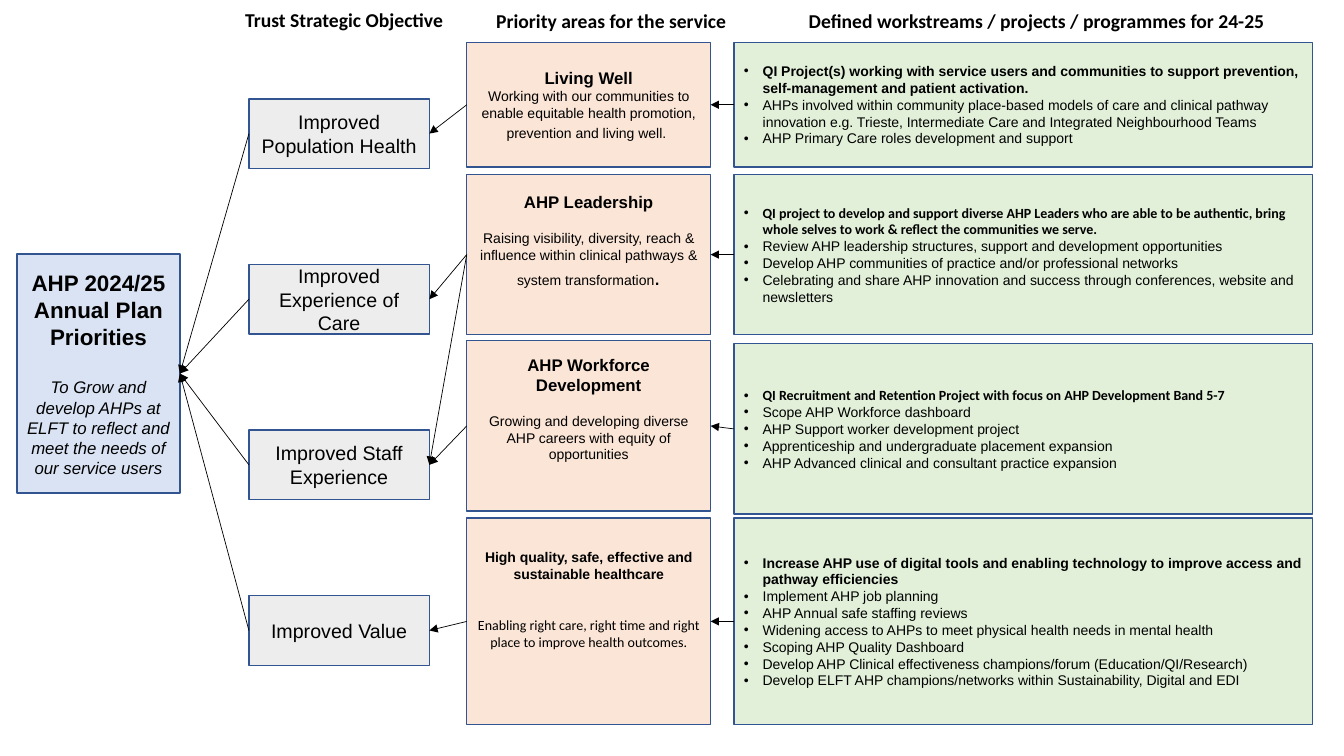
from lxml.etree import SubElement
from pptx import Presentation
from pptx.dml.color import RGBColor
from pptx.enum.shapes import MSO_CONNECTOR, MSO_SHAPE
from pptx.enum.text import MSO_ANCHOR, MSO_AUTO_SIZE, PP_ALIGN
from pptx.oxml.ns import qn
from pptx.util import Pt

COLORS = {
    "text": "000000",
    "arrow": "000000",
    "border": "325491",
    "plan": "DAE3F3",
    "objective": "EDEDED",
    "priority": "FBE5D6",
    "workstream": "E2F0D9",
}
TOP, LEFT, RIGHT = 0, 1, 3
BULLET_INDENT = 13.5

HEADINGS = [
    ("Trust Strategic Objective", (158.4, 2.2, 175, 24.5)),
    ("Priority areas for the service", (344.9, 2.9, 183.6, 24.5)),
    ("Defined workstreams / projects / programmes for 24-25", (560.9, 2.9, 359.3, 24.5)),
]

OBJECTIVES = [
    "Improved Population Health",
    "Improved Experience of Care",
    "Improved Staff Experience",
    "Improved Value",
]

# Each row: vertical place of both boxes, priority text, workstreams, objectives served
ROWS = [
    {
        "priority_top": 30.2, "workstream_top": 30.2, "height": 89.3,
        "title": "Living Well", "title_size": 12, "gap": 0, "room_below": 0,
        "aim": "Working with our communities to enable equitable health promotion, "
               "prevention and living well.",
        "aim_font": "Arial", "ending": (" ", 12), "lead_font": "Arial",
        "workstreams": [
            "QI Project(s) working with service users and communities to support "
            "prevention, self-management and patient activation.",
            "AHPs involved within community place-based models of care and clinical pathway "
            "innovation e.g. Trieste, Intermediate Care and Integrated Neighbourhood Teams",
            "AHP Primary Care roles development and support",
        ],
        "serves": [0],
    },
    {
        "priority_top": 124.6, "workstream_top": 124.6, "height": 114.5,
        "title": "AHP Leadership", "title_size": 12, "gap": 12.2, "room_below": 19.5,
        "aim": "Raising visibility, diversity, reach & influence within clinical pathways "
               "& system transformation",
        "aim_font": "Arial", "ending": (".", 16), "lead_font": "Calibri",
        "workstreams": [
            "QI project to develop and support diverse AHP Leaders who are able to be "
            "authentic, bring whole selves to work & reflect the communities we serve.",
            "Review AHP leadership structures, support and development opportunities",
            "Develop AHP communities of practice and/or professional networks",
            "Celebrating and share AHP innovation and success through conferences, "
            "website and newsletters",
        ],
        "serves": [1, 2],
    },
    {
        "priority_top": 243.4, "workstream_top": 245.5, "height": 121.7,
        "title": "AHP Workforce Development", "title_size": 12, "gap": 12.2, "room_below": 24.4,
        "aim": "Growing and developing diverse AHP careers with equity of opportunities",
        "aim_font": "Arial", "ending": None, "lead_font": "Calibri",
        "workstreams": [
            "QI Recruitment and Retention Project with focus on AHP Development Band 5-7",
            "Scope AHP Workforce dashboard",
            "AHP Support worker development project",
            "Apprenticeship and undergraduate placement expansion",
            "AHP Advanced clinical and consultant practice expansion",
        ],
        "serves": [2],
    },
    {
        "priority_top": 370.1, "workstream_top": 370.1, "height": 147.6,
        "title": "High quality, safe, effective and sustainable healthcare",
        "title_size": 10, "gap": 24.4, "room_below": 31.7,
        "aim": "Enabling right care, right time and right place to improve health outcomes.",
        "aim_font": "Calibri", "ending": None, "lead_font": "Arial",
        "workstreams": [
            "Increase AHP use of digital tools and enabling technology to improve access "
            "and pathway efficiencies",
            "Implement AHP job planning",
            "AHP Annual safe staffing reviews",
            "Widening access to AHPs to meet physical health needs in mental health",
            "Scoping AHP Quality Dashboard",
            "Develop AHP Clinical effectiveness champions/forum (Education/QI/Research)",
            "Develop ELFT AHP champions/networks within Sustainability, Digital and EDI",
        ],
        "serves": [3],
    },
]


def style(run, size, font="Arial", bold=False, italic=False):
    run.font.size = Pt(size)
    run.font.name = font
    run.font.bold = bold
    run.font.italic = italic
    run.font.color.rgb = RGBColor.from_string(COLORS["text"])


def add_box(slide, box, fill, lines, align=PP_ALIGN.CENTER):
    """Draw a bordered rectangle holding one paragraph per line of text."""
    panel = slide.shapes.add_shape(MSO_SHAPE.RECTANGLE, *map(Pt, box))
    panel.shadow.inherit = False
    panel.fill.solid()
    panel.fill.fore_color.rgb = RGBColor.from_string(COLORS[fill])
    panel.line.color.rgb = RGBColor.from_string(COLORS["border"])
    panel.line.width = Pt(1)
    frame = panel.text_frame
    frame.word_wrap = True
    frame.vertical_anchor = MSO_ANCHOR.MIDDLE
    frame.text = "\n".join(lines)
    for paragraph in frame.paragraphs:
        paragraph.alignment = align
    return panel


def add_heading(slide, box, wording):
    heading = slide.shapes.add_textbox(*map(Pt, box))
    frame = heading.text_frame
    frame.word_wrap = True
    frame.auto_size = MSO_AUTO_SIZE.SHAPE_TO_FIT_TEXT
    frame.text = wording
    frame.paragraphs[0].alignment = PP_ALIGN.CENTER
    style(frame.paragraphs[0].runs[0], 14, "Calibri", bold=True)


def add_plan(slide, box):
    plan = add_box(slide, box, "plan", [
        "AHP 2024/25",
        "Annual Plan Priorities",
        "To Grow and develop AHPs at ELFT to reflect and meet the needs of our service users",
    ])
    *titles, purpose = plan.text_frame.paragraphs
    for title in titles:
        style(title.runs[0], 16, bold=True)
    purpose.space_before = Pt(19.5)
    style(purpose.runs[0], 12, italic=True)
    return plan


def add_objective(slide, box, wording):
    objective = add_box(slide, box, "objective", [wording])
    style(objective.text_frame.paragraphs[0].runs[0], 14)
    return objective


def add_priority(slide, box, row):
    priority = add_box(slide, box, "priority", [row["title"], row["aim"]])
    priority.text_frame.margin_bottom = Pt(3.6 + row["room_below"])
    title, aim = priority.text_frame.paragraphs
    style(title.runs[0], row["title_size"], bold=True)
    aim.space_before = Pt(row["gap"])
    style(aim.runs[0], 10, row["aim_font"])
    if row["ending"]:
        wording, size = row["ending"]
        ending = aim.add_run()
        ending.text = wording
        style(ending, size)
    return priority


def add_workstreams(slide, box, row):
    """Draw the bulleted panel, whose first workstream is the bold lead."""
    panel = add_box(slide, box, "workstream", row["workstreams"], PP_ALIGN.LEFT)
    for index, paragraph in enumerate(panel.text_frame.paragraphs):
        properties = paragraph._p.get_or_add_pPr()
        properties.set("marL", str(Pt(BULLET_INDENT)))
        properties.set("indent", str(-Pt(BULLET_INDENT)))
        SubElement(properties, qn("a:buFont"), typeface="Arial")
        SubElement(properties, qn("a:buChar"), char="•")
        lead = index == 0
        style(paragraph.runs[0], 10, row["lead_font"] if lead else "Arial", bold=lead)
    return panel


def add_arrow(slide, source, target):
    """Join the left side of source to the right side of target."""
    arrow = slide.shapes.add_connector(MSO_CONNECTOR.STRAIGHT, 0, 0, 0, 0)
    arrow.begin_connect(source, LEFT)
    arrow.end_connect(target, RIGHT)
    arrow.line.color.rgb = RGBColor.from_string(COLORS["arrow"])
    arrow.line.width = Pt(0.5)
    SubElement(arrow.line._get_or_add_ln(), qn("a:tailEnd"), type="triangle")
    SubElement(arrow._element.spPr, qn("a:effectLst"))


def add_driver_diagram(slide):
    for wording, box in HEADINGS:
        add_heading(slide, box, wording)
    plan = add_plan(slide, (12.2, 181.4, 116.3, 170.9))
    objectives = [
        add_objective(slide, (177.8, 70.6 + 118.3 * index, 128.9, 49.7), wording)
        for index, wording in enumerate(OBJECTIVES)
    ]
    for objective in objectives:
        add_arrow(slide, objective, plan)
    for row in ROWS:
        priority = add_priority(slide, (333.4, row["priority_top"], 174.2, row["height"]), row)
        workstreams = add_workstreams(
            slide, (524.2, row["workstream_top"], 413.3, row["height"]), row)
        add_arrow(slide, workstreams, priority)
        for index in row["serves"]:
            add_arrow(slide, priority, objectives[index])


def main():
    presentation = Presentation()
    presentation.slide_width, presentation.slide_height = Pt(960), Pt(540)
    add_driver_diagram(presentation.slides.add_slide(presentation.slide_layouts[6]))
    presentation.save("out.pptx")


if __name__ == "__main__":
    main()
